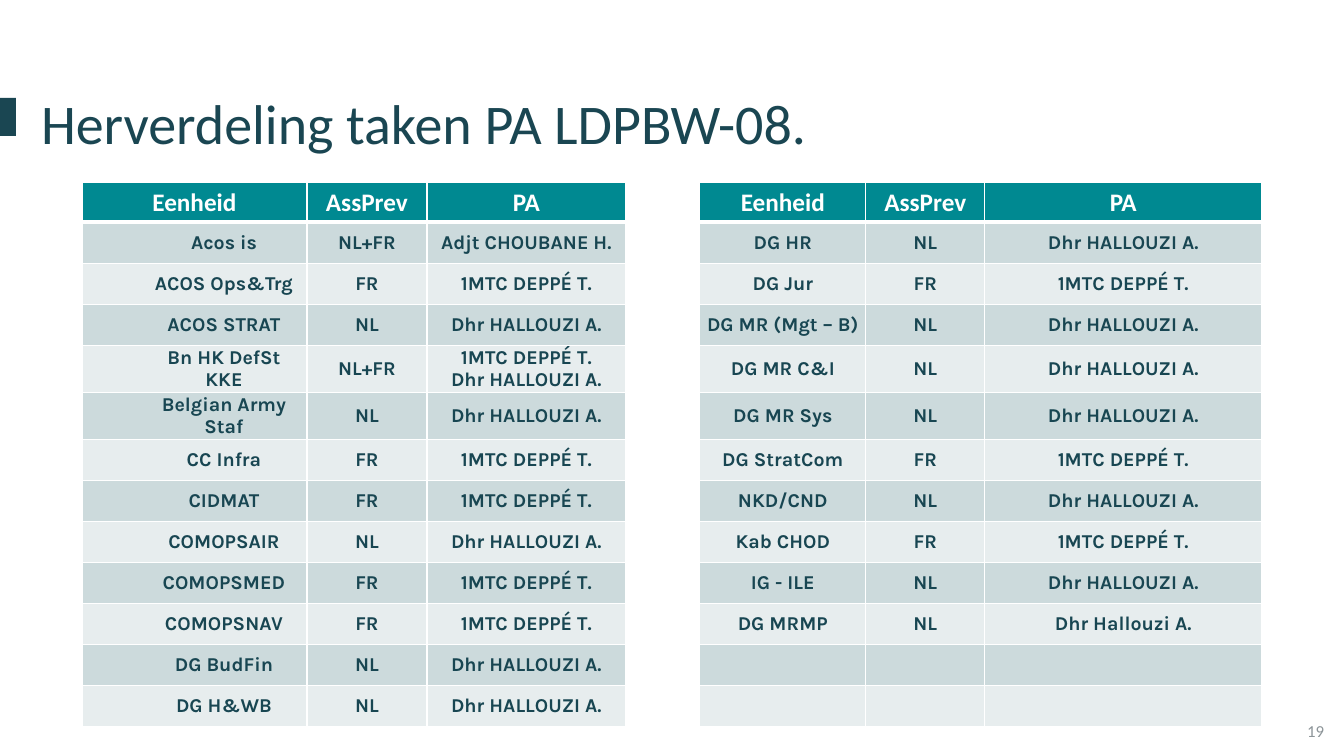
from lxml import etree
from pptx import Presentation
from pptx.dml.color import RGBColor
from pptx.enum.shapes import MSO_SHAPE
from pptx.enum.text import MSO_ANCHOR, MSO_AUTO_SIZE, PP_ALIGN
from pptx.oxml.ns import qn
from pptx.util import Pt

RECTANGLE = MSO_SHAPE.RECTANGLE
TOP, MIDDLE = MSO_ANCHOR.TOP, MSO_ANCHOR.MIDDLE
LEFT, CENTER, RIGHT = PP_ALIGN.LEFT, PP_ALIGN.CENTER, PP_ALIGN.RIGHT
NO_AUTOFIT = MSO_AUTO_SIZE.NONE

WIDTH, HEIGHT = 1344, 756
EMU_PER_PX = 12192000 / WIDTH

COLORS = {
    "dark": "1A4652", "body": "184652", "grey": "8C9498", "white": "FFFFFF",
    "header": "008991", "band": "CCDADC", "light": "E7EDEE",
}
FORMATS = {
    "title": {"name": "Calibri", "size": Pt(40), "bold": False, "color": "dark"},
    "number": {"name": "Calibri", "size": Pt(12), "bold": False, "color": "grey"},
    "header": {"name": "Calibri", "size": Pt(18), "bold": True, "color": "white"},
    "body": {"name": "Karla", "size": Pt(14), "bold": True, "color": "body"},
}

# Table content: unit, language of the adviser, prevention adviser
HEADINGS = ("Eenheid", "AssPrev", "PA")
DEPPE, HALLOUZI = "1MTC DEPPÉ T.", "Dhr HALLOUZI A."
LEFT_UNITS = [
    ("Acos is", "NL+FR", "Adjt CHOUBANE H."),
    ("ACOS Ops&Trg", "FR", DEPPE),
    ("ACOS STRAT", "NL", HALLOUZI),
    ("Bn HK DefSt KKE", "NL+FR", f"{DEPPE}\n{HALLOUZI}"),
    ("Belgian Army Staf", "NL", HALLOUZI),
    ("CC Infra", "FR", DEPPE),
    ("CIDMAT", "FR", DEPPE),
    ("COMOPSAIR", "NL", HALLOUZI),
    ("COMOPSMED", "FR", DEPPE),
    ("COMOPSNAV", "FR", DEPPE),
    ("DG BudFin", "NL", HALLOUZI),
    ("DG H&WB", "NL", HALLOUZI),
]
RIGHT_UNITS = [
    ("DG HR", "NL", HALLOUZI),
    ("DG Jur", "FR", DEPPE),
    ("DG MR (Mgt – B)", "NL", HALLOUZI),
    ("DG MR C&I", "NL", HALLOUZI),
    ("DG MR Sys", "NL", HALLOUZI),
    ("DG StratCom", "FR", DEPPE),
    ("NKD/CND", "NL", HALLOUZI),
    ("Kab CHOD", "FR", DEPPE),
    ("IG - ILE", "NL", HALLOUZI),
    ("DG MRMP", "NL", "Dhr Hallouzi A."),
    ("", "", ""),
    ("", "", ""),
]
COLUMN_WIDTHS = (225, 120, 199, 74, 166, 119, 277)
GAP_COLUMN = 3
HEADER_HEIGHT, ROW_HEIGHT = 21, 41
UNIT_INDENT = 59


def px(length):
    return round(length * EMU_PER_PX)


def rgb(name):
    return RGBColor.from_string(COLORS[name])


def write(paragraph, text, style, alignment):
    paragraph.text = text
    paragraph.alignment = alignment
    for run in paragraph.runs:
        for attribute, value in FORMATS[style].items():
            if attribute == "color":
                run.font.color.rgb = rgb(value)
            else:
                setattr(run.font, attribute, value)


def add_title(slide, text):
    title = slide.shapes.title
    title.left, title.top, title.width, title.height = map(px, (31, 83, 1245, 78))
    frame = title.text_frame
    frame.auto_size = NO_AUTOFIT
    frame.vertical_anchor = TOP
    write(frame.paragraphs[0], text, "title", LEFT)


def add_accent(slide):
    accent = slide.shapes.add_shape(RECTANGLE, *map(px, (0, 98, 16, 38)))
    accent.shadow.inherit = False
    accent.fill.solid()
    accent.fill.fore_color.rgb = rgb("dark")
    accent.line.fill.background()


def add_page_number(slide, text):
    box = slide.shapes.add_textbox(*map(px, (1032, 711, 302, 40)))
    box.text_frame.word_wrap = True
    box.text_frame.vertical_anchor = MIDDLE
    write(box.text_frame.paragraphs[0], text, "number", RIGHT)


def set_borders(cell, top, bottom):
    properties = cell._tc.get_or_add_tcPr()
    for tag, points in (("a:lnL", 1), ("a:lnR", 1), ("a:lnT", top), ("a:lnB", bottom)):
        line = etree.SubElement(properties, qn(tag), w=str(Pt(points)))
        fill = etree.SubElement(line, qn("a:solidFill"))
        etree.SubElement(fill, qn("a:srgbClr"), val=COLORS["white"])


def format_cell(cell, text, row, column):
    is_header = row == 0
    set_borders(cell, top=3 if row == 1 else 1, bottom=3 if is_header else 1)
    cell.vertical_anchor = MIDDLE
    if column == GAP_COLUMN:
        cell.fill.background()
        return
    cell.fill.solid()
    cell.fill.fore_color.rgb = rgb("header" if is_header else ("light", "band")[row % 2])
    paragraph = cell.text_frame.paragraphs[0]
    write(paragraph, text, "header" if is_header else "body", CENTER)
    if not is_header:
        cell.margin_left = cell.margin_right = px(7)
        cell.margin_top = cell.margin_bottom = 0
        paragraph.space_after = Pt(6)
        if column == 0:
            paragraph._p.get_or_add_pPr().set("marL", str(px(UNIT_INDENT)))


def add_units_table(slide):
    rows = [(*HEADINGS, "", *HEADINGS)]
    rows += [(*left, "", *right) for left, right in zip(LEFT_UNITS, RIGHT_UNITS)]
    height = HEADER_HEIGHT + ROW_HEIGHT * (len(rows) - 1)
    frame = slide.shapes.add_table(
        len(rows), len(COLUMN_WIDTHS), px(82), px(182), px(sum(COLUMN_WIDTHS)), px(height))
    table = frame.table
    table.horz_banding = False
    for column, width in zip(table.columns, COLUMN_WIDTHS):
        column.width = px(width)
    for row, texts in enumerate(rows):
        table.rows[row].height = px(ROW_HEIGHT if row else HEADER_HEIGHT)
        for column, text in enumerate(texts):
            format_cell(table.cell(row, column), text, row, column)


def main():
    presentation = Presentation()
    presentation.slide_width, presentation.slide_height = px(WIDTH), px(HEIGHT)
    slide = presentation.slides.add_slide(presentation.slide_layouts[5])
    add_accent(slide)
    add_page_number(slide, "19")
    add_title(slide, "Herverdeling taken PA LDPBW-08.")
    add_units_table(slide)
    presentation.save("out.pptx")


if __name__ == "__main__":
    main()
